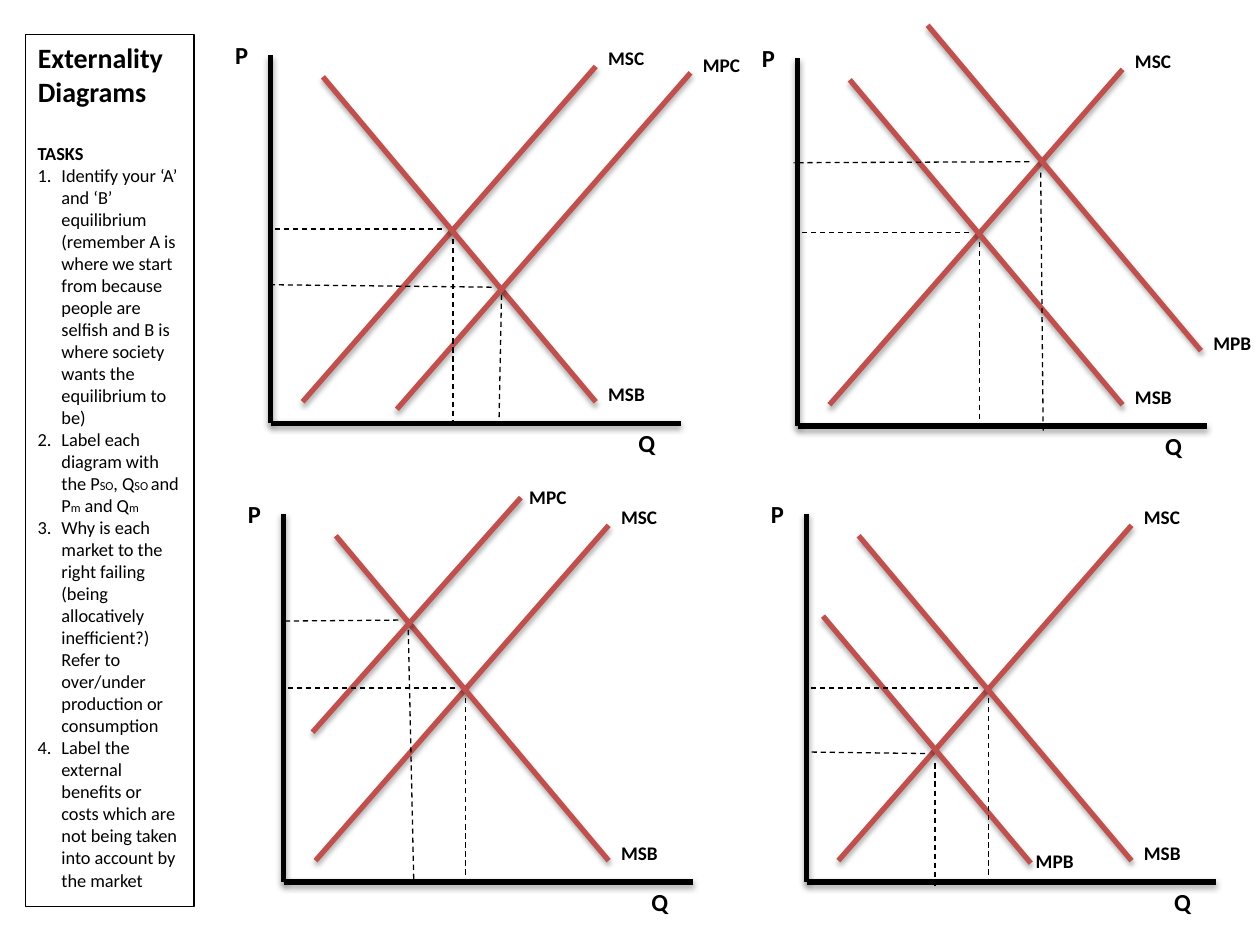
from lxml.etree import SubElement
from pptx import Presentation
from pptx.dml.color import RGBColor
from pptx.enum.dml import MSO_LINE_DASH_STYLE as DashStyle
from pptx.enum.shapes import MSO_CONNECTOR as Connector, MSO_SHAPE as Shape
from pptx.enum.text import MSO_ANCHOR as Anchor, MSO_AUTO_SIZE as AutoSize, PP_ALIGN as Align
from pptx.oxml import parse_xml
from pptx.oxml.ns import nsdecls, qn
from pptx.util import Cm, Pt

COLORS = {"ink": "000000", "curve": "C0504D"}
FONT = "Calibri"
BODY_SIZE, SUBSCRIPT_SIZE = 10.5, 7

TASKS = [
    ["Identify your ‘A’ and ‘B’ equilibrium (remember A is where we start from because "
     "people are selfish and B is where society wants the equilibrium to be)"],
    ["Label each diagram with the P", "SO", ", Q", "SO ", "and P", "m", " and Q", "m"],
    ["Why is each market to the right failing (being allocatively inefficient?) "
     "Refer to over/under production or consumption"],
    ["Label the external benefits or costs which are not being taken into account by the market"],
]

AXES = [((0, 7.42), (0, 0)), ((0, 0), (8.26, 0))]
SOCIAL_CURVES = [((0.64, 0.43), (6.55, 7.19)), ((1.05, 6.98), (6.55, 0.43))]
SOCIAL_GUIDES = [((3.67, 3.71), (3.67, 0)), ((3.46, 3.91), (0, 3.91))]
SOCIAL_LABELS = [("MSC", (6.55, 7.72)), ("MSB", (6.55, 0.94))]
AXIS_LABELS = [("P", (-0.97, 7.85)), ("Q", (7.16, 0.02))]

DIAGRAMS = [
    {"origin": (5.46, 8.53), "private": ((2.54, 0.28), (8.46, 7.06)),
     "label": ("MPC", (8.46, 7.59)),
     "guides": [((4.65, 2.59), (4.6, 0)), ((4.45, 2.74), (-0.08, 2.79))]},
    {"origin": (16.08, 8.59), "private": ((2.62, 8.08), (8.13, 1.52)),
     "label": ("MPB", (8.13, 2.03)),
     "guides": [((4.9, 5.11), (4.95, -0.1)), ((4.67, 5.33), (-0.08, 5.31))]},
    {"origin": (5.72, 17.78), "private": ((0.58, 3.02), (4.78, 7.75)),
     "label": ("MPC", (4.7, 8.13)),
     "guides": [((2.51, 5.08), (2.62, 0.05)), ((2.31, 5.28), (-0.03, 5.26))]},
    {"origin": (16.26, 17.78), "private": ((0.33, 5.36), (4.52, 0.38)),
     "label": ("MPB", (4.37, 0.79)),
     "guides": [((2.59, 2.39), (2.59, -0.13)), ((2.39, 2.59), (0.03, 2.62))]},
]


def rgb(name):
    return RGBColor.from_string(COLORS[name])


def write_text(paragraph, text, size=BODY_SIZE, bold=False, color="ink"):
    paragraph.alignment = Align.LEFT
    run = paragraph.add_run()
    run.text = text
    run.font.name = FONT
    run.font.size = Pt(size)
    run.font.bold = bold
    run.font.color.rgb = rgb(color)


def number_paragraph(paragraph):
    properties = paragraph._p.get_or_add_pPr()
    properties.set("marL", str(Cm(0.48)))
    properties.set("indent", str(Cm(-0.48)))
    SubElement(properties, qn("a:buFont"), typeface="+mj-lt")
    SubElement(properties, qn("a:buAutoNum"), type="arabicPeriod")


def add_line(slide, origin, ends, color="ink", width=3, dashed=False):
    left, bottom = origin
    (x1, y1), (x2, y2) = ends
    line = slide.shapes.add_connector(
        Connector.STRAIGHT, Cm(left + x1), Cm(bottom - y1), Cm(left + x2), Cm(bottom - y2))
    line.line.color.rgb = rgb(color)
    line.line.width = Pt(width)
    if dashed:
        line.line.dash_style = DashStyle.DASH
    shadow = "" if dashed else (
        '<a:outerShdw blurRad="40000" dist="23000" dir="5400000" rotWithShape="0">'
        f'<a:srgbClr val="{COLORS["ink"]}"><a:alpha val="35000"/></a:srgbClr></a:outerShdw>')
    line._element.spPr.append(
        parse_xml(f'<a:effectLst {nsdecls("a")}>{shadow}</a:effectLst>'))


def add_label(slide, origin, label, size=11, width=1.27, height=0.74):
    text, (x, y) = label
    box = slide.shapes.add_textbox(
        Cm(origin[0] + x), Cm(origin[1] - y), Cm(width), Cm(height))
    box.text_frame.word_wrap = False
    box.text_frame.auto_size = AutoSize.SHAPE_TO_FIT_TEXT
    write_text(box.text_frame.paragraphs[0], text, size=size, bold=True)


def add_diagram(slide, origin, private, label, guides):
    for axis in AXES:
        add_line(slide, origin, axis)
    for curve in [*SOCIAL_CURVES, private]:
        add_line(slide, origin, curve, color="curve")
    for guide in [*SOCIAL_GUIDES, *guides]:
        add_line(slide, origin, guide, width=0.75, dashed=True)
    for curve_label in [*SOCIAL_LABELS, label]:
        add_label(slide, origin, curve_label)
    for axis_label in AXIS_LABELS:
        add_label(slide, origin, axis_label, size=14, width=0.84, height=0.86)


def add_task_panel(slide, left, top, width, height, title_height=1.7):
    title = slide.shapes.title
    title.left, title.top = Cm(left), Cm(top)
    title.width, title.height = Cm(width), Cm(title_height)
    title.text_frame.vertical_anchor = Anchor.TOP
    title.text_frame.auto_size = AutoSize.NONE
    write_text(title.text_frame.paragraphs[0], "Externality Diagrams", size=16, bold=True)

    panel = slide.shapes.add_shape(Shape.RECTANGLE, Cm(left), Cm(top), Cm(width), Cm(height))
    panel.shadow.inherit = False
    panel.fill.background()
    panel.line.color.rgb = rgb("ink")
    panel.line.width = Pt(0.75)
    frame = panel.text_frame
    frame.word_wrap = True
    frame.vertical_anchor = Anchor.TOP
    frame.margin_top = Cm(title_height + 0.47)
    write_text(frame.paragraphs[0], "TASKS", bold=True)
    for task in TASKS:
        paragraph = frame.add_paragraph()
        for index, part in enumerate(task):
            write_text(paragraph, part, size=SUBSCRIPT_SIZE if index % 2 else BODY_SIZE)
        number_paragraph(paragraph)


def main():
    presentation = Presentation()
    presentation.slide_width, presentation.slide_height = Cm(25.4), Cm(19.05)
    slide = presentation.slides.add_slide(presentation.slide_layouts[5])
    add_task_panel(slide, left=0.51, top=0.69, width=3.4, height=17.58)
    for diagram in DIAGRAMS:
        add_diagram(slide, **diagram)
    presentation.save("out.pptx")


if __name__ == "__main__":
    main()
